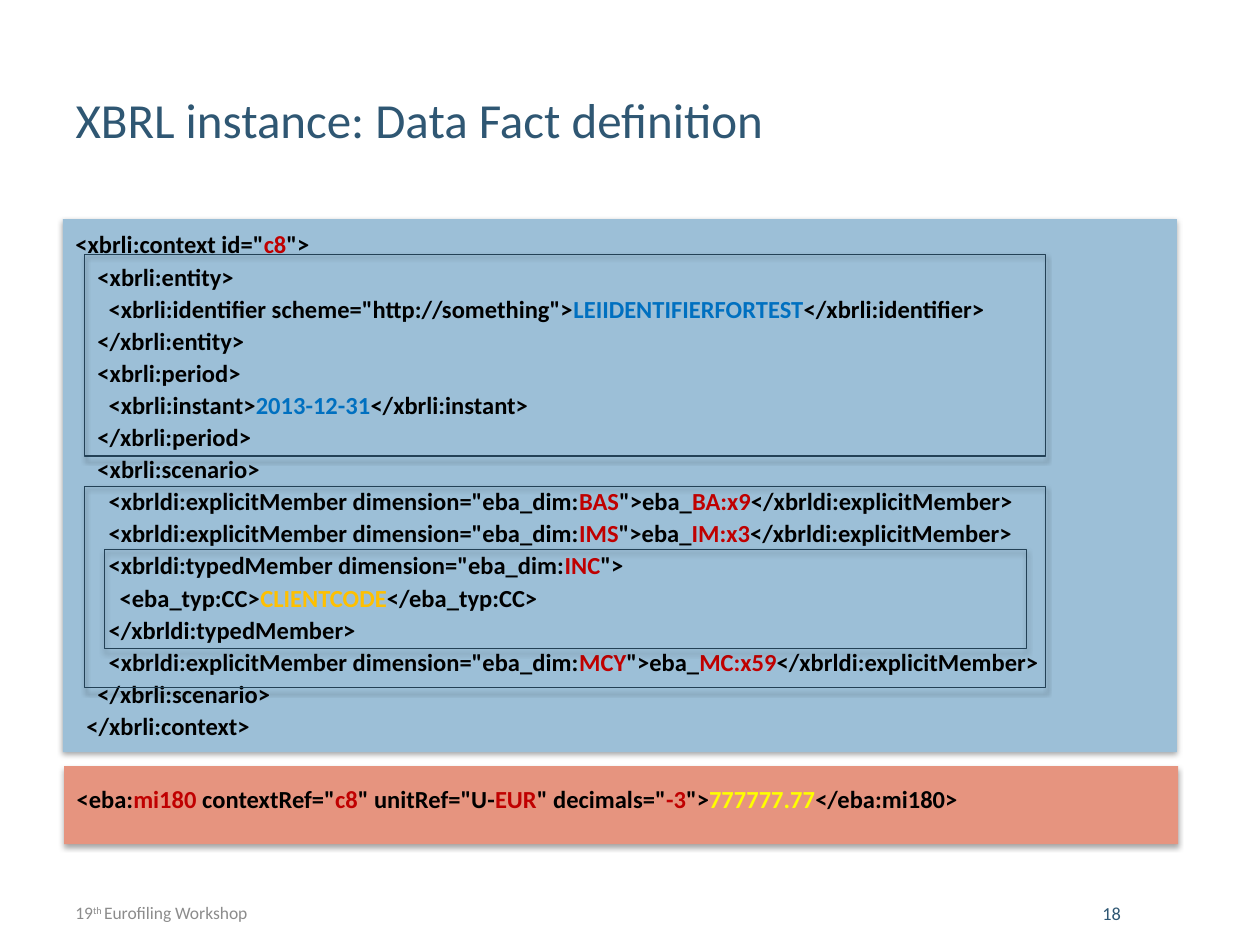
from dataclasses import dataclass

from lxml import etree
from pptx import Presentation
from pptx import util as u
from pptx.dml.color import RGBColor
from pptx.enum import shapes, text
from pptx.oxml.ns import qn


@dataclass(frozen=True)
class Theme:
    font: str = "Calibri"
    heading: str = "2F5773"
    muted: str = "8C8C8C"
    code: str = "000000"
    key: str = "C00000"
    value: str = "0070C0"
    typed: str = "FFC000"
    amount: str = "FFFF00"
    context_fill: str = "9CBFD7"
    fact_fill: str = "E6947F"
    outline: str = "234156"
    title_size: float = 28
    code_size: float = 14
    number_size: float = 10.5
    footer_size: float = 10


THEME = Theme()


def write_text(paragraph, words, *, size, color, bold=False, baseline=0):
    run = paragraph.add_run()
    run.text = words
    run.font.name = THEME.font
    run.font.size = u.Pt(size)
    run.font.bold = bold
    run.font.color.rgb = RGBColor.from_string(color)
    if baseline:
        run.font._element.set("baseline", str(baseline * 1000))


def place(shape, box):
    shape.left, shape.top, shape.width, shape.height = map(u.Inches, box)


class SlideBuilder:
    def __init__(self, theme, slide):
        self.theme = theme
        self.slide = slide

    def title(self, words, box):
        heading = self.slide.shapes.title
        place(heading, box)
        frame = heading.text_frame
        frame.vertical_anchor = text.MSO_ANCHOR.MIDDLE
        paragraph = frame.paragraphs[0]
        paragraph.alignment = text.PP_ALIGN.LEFT
        write_text(paragraph, words, size=self.theme.title_size, color=self.theme.heading)

    def rectangle(self, box, fill=None, line=None):
        rect = self.slide.shapes.add_shape(shapes.MSO_SHAPE.RECTANGLE, *map(u.Inches, box))
        if fill:
            rect.fill.solid()
            rect.fill.fore_color.rgb = RGBColor.from_string(fill)
        else:
            rect.fill.background()
        if line:
            rect.line.color.rgb = RGBColor.from_string(line)
            rect.line.width = u.Pt(0.75)
        else:
            rect.line.fill.background()
        self.cast_shadow(rect)
        return rect

    def cast_shadow(self, shape):
        shape.shadow.inherit = False
        effects = shape._element.spPr.find(qn("a:effectLst"))
        shadow = etree.SubElement(
            effects, qn("a:outerShdw"), blurRad=str(u.Pt(3.1)), dist=str(u.Pt(1.8)),
            dir="5400000", rotWithShape="0")
        color = etree.SubElement(shadow, qn("a:srgbClr"), val="000000")
        etree.SubElement(color, qn("a:alpha"), val="35000")

    def code_panel(self, box, fill, lines, top_inset):
        frame = self.rectangle(box, fill=fill).text_frame
        frame.word_wrap = True
        frame.vertical_anchor = text.MSO_ANCHOR.TOP
        frame.margin_top = u.Inches(top_inset)
        for index, line in enumerate(lines):
            paragraph = frame.add_paragraph() if index else frame.paragraphs[0]
            paragraph.alignment = text.PP_ALIGN.LEFT
            paragraph.line_spacing = 1.05
            paragraph.space_after = u.Pt(0.7)
            for words, role in line:
                write_text(paragraph, words, size=self.theme.code_size,
                           color=getattr(self.theme, role), bold=True)

    def label(self, box, runs, size, color):
        frame = self.slide.shapes.add_textbox(*map(u.Inches, box)).text_frame
        frame.word_wrap = True
        for words, baseline in runs:
            write_text(frame.paragraphs[0], words, size=size, color=color, baseline=baseline)


def plain(words):
    return [(words, "code")]


def marked(before, words, after, role):
    return [(before, "code"), (words, role), (after, "code")]


def explicit_member(dimension, member):
    opening = marked('      <xbrldi:explicitMember dimension="eba_dim:', dimension, '">eba_', "key")
    return opening + [(member, "key"), ("</xbrldi:explicitMember>", "code")]


CONTEXT = [
    marked('<xbrli:context id="', "c8", '">', "key"),
    plain("    <xbrli:entity>"),
    marked('      <xbrli:identifier scheme="http://something">', "LEIIDENTIFIERFORTEST",
           "</xbrli:identifier>", "value"),
    plain("    </xbrli:entity>"),
    plain("    <xbrli:period>"),
    marked("      <xbrli:instant>", "2013-12-31", "</xbrli:instant>", "value"),
    plain("    </xbrli:period>"),
    plain("    <xbrli:scenario>"),
    explicit_member("BAS", "BA:x9"),
    explicit_member("IMS", "IM:x3"),
    marked('      <xbrldi:typedMember dimension="eba_dim:', "INC", '">', "key"),
    marked("        <eba_typ:CC>", "CLIENTCODE", "</eba_typ:CC>", "typed"),
    plain("      </xbrldi:typedMember>"),
    explicit_member("MCY", "MC:x59"),
    plain("    </xbrli:scenario>"),
    plain("  </xbrli:context>"),
]

FACT = [
    marked("<eba:", "mi180", ' contextRef="', "key")
    + [("c8", "key")]
    + marked('" unitRef="U-', "EUR", '" decimals="', "key")
    + [("-3", "key")]
    + marked('">', "777777.77", "</eba:mi180>", "amount")
]

OUTLINES = {
    "entity and period": (0.67, 2.02, 7.63, 1.6),
    "scenario": (0.67, 3.86, 7.63, 1.6),
    "typed member": (0.83, 4.36, 7.32, 0.79),
}


def main():
    deck = Presentation()
    deck.slide_width, deck.slide_height = u.Inches(10), u.Inches(7.5)
    title_only = deck.slide_layouts.get_by_name("Title Only")
    builder = SlideBuilder(THEME, deck.slides.add_slide(title_only))

    builder.title("XBRL instance: Data Fact definition", (0.5, 0.64, 7.29, 0.61))
    builder.code_panel((0.51, 6.08, 8.84, 0.62), THEME.fact_fill, FACT, top_inset=0.13)
    builder.code_panel((0.5, 1.74, 8.84, 4.23), THEME.context_fill, CONTEXT, top_inset=0.07)
    for box in OUTLINES.values():
        builder.rectangle(box, line=THEME.outline)
    builder.label((0.5, 7.11, 5.38, 0.24), [("19", 0), ("th ", 30), ("Eurofiling Workshop", 0)],
                  THEME.footer_size, THEME.muted)
    builder.label((8.65, 7.11, 0.85, 0.24), [("18", 0)], THEME.number_size, THEME.heading)

    deck.save("out.pptx")


if __name__ == "__main__":
    main()
